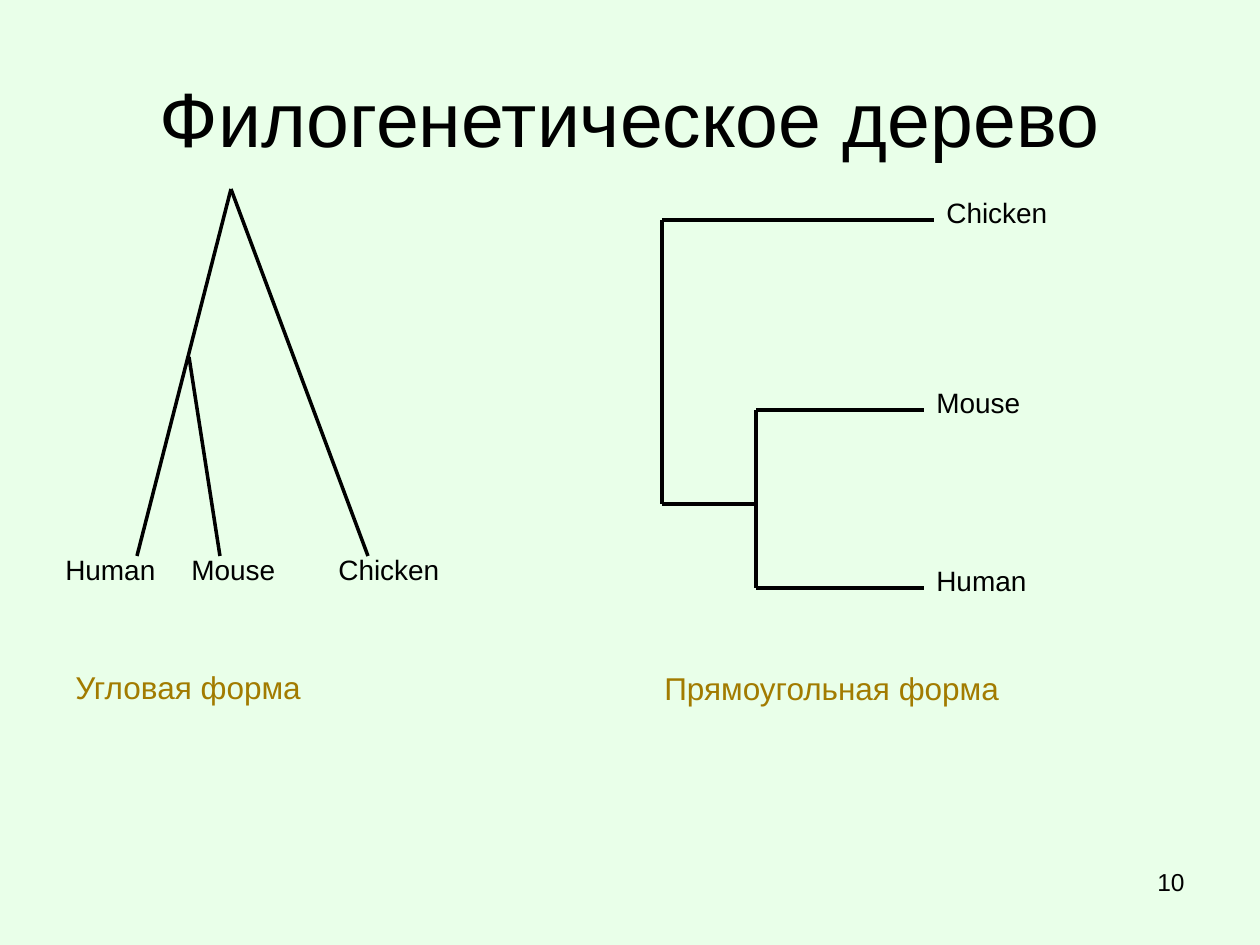
from dataclasses import dataclass

import pptx
import pptx.dml.color
import pptx.enum.shapes
import pptx.enum.text
import pptx.oxml.ns
import pptx.util
from lxml import etree

PX_PER_INCH = 126
ALIGN = pptx.enum.text.PP_ALIGN
ANCHOR = pptx.enum.text.MSO_ANCHOR


@dataclass(frozen=True)
class Theme:
    font: str = "Arial"
    background: str = "E9FFE9"
    ink: str = "000000"
    accent: str = "A27B00"
    title_size: int = 44
    caption_size: int = 18
    leaf_size: int = 16
    number_size: int = 14
    branch_width: int = 2


@dataclass(frozen=True)
class Box:
    left: int
    top: int
    width: int
    height: int


@dataclass(frozen=True)
class Leaf:
    species: str
    left: int
    top: int


@dataclass(frozen=True)
class Branch:
    x1: int
    y1: int
    x2: int
    y2: int


@dataclass(frozen=True)
class Tree:
    caption: str
    caption_box: Box
    branches: tuple[Branch, ...]
    leaves: tuple[Leaf, ...]


THEME = Theme()
LEAF_WIDTHS = {"Human": 116, "Mouse": 158, "Chicken": 210}
LEAF_HEIGHT = 46

# Angular form: the root on top, leaves along one baseline
ROOT_X, ROOT_Y = 231, 189
NODE_X, NODE_Y = 189, 357
BASELINE, LEAF_ROW = 556, 546
ANGULAR = Tree(
    "Угловая форма",
    Box(63, 662, 431, 50),
    (
        Branch(ROOT_X, ROOT_Y, 137, BASELINE),
        Branch(ROOT_X, ROOT_Y, 368, BASELINE),
        Branch(NODE_X, NODE_Y, 220, BASELINE),
    ),
    (
        Leaf("Human", 53, LEAF_ROW),
        Leaf("Chicken", 326, LEAF_ROW),
        Leaf("Mouse", 179, LEAF_ROW),
    ),
)

# Rectangular form: the root on the left, one level per species
STEM, FORK = 662, 756
TIP, CHICKEN_TIP = 924, 934
CHICKEN_Y, MOUSE_Y, FORK_Y, HUMAN_Y = 220, 410, 504, 588
LEAF_RISE = 31
RECTANGULAR = Tree(
    "Прямоугольная форма",
    Box(652, 663, 431, 50),
    (
        Branch(STEM, CHICKEN_Y, STEM, FORK_Y),
        Branch(STEM, CHICKEN_Y, CHICKEN_TIP, CHICKEN_Y),
        Branch(STEM, FORK_Y, FORK, FORK_Y),
        Branch(FORK, MOUSE_Y, FORK, HUMAN_Y),
        Branch(FORK, MOUSE_Y, TIP, MOUSE_Y),
        Branch(FORK, HUMAN_Y, TIP, HUMAN_Y),
    ),
    (
        Leaf("Human", TIP, HUMAN_Y - LEAF_RISE),
        Leaf("Mouse", TIP, MOUSE_Y - LEAF_RISE),
        Leaf("Chicken", CHICKEN_TIP, CHICKEN_Y - LEAF_RISE),
    ),
)


def px(length: int) -> pptx.util.Emu:
    return pptx.util.Emu(round(length * 914400 / PX_PER_INCH))


def rgb(value: str) -> pptx.dml.color.RGBColor:
    return pptx.dml.color.RGBColor.from_string(value)


def write(slide, text: str, box: Box, *, size: int, color: str = THEME.ink,
          align=ALIGN.LEFT, anchor=ANCHOR.TOP, holder=None) -> None:
    """Put formatted text in the holder, or in a new text box."""
    if holder is None:
        holder = slide.shapes.add_textbox(0, 0, 0, 0)
    holder.left, holder.top = px(box.left), px(box.top)
    holder.width, holder.height = px(box.width), px(box.height)
    frame = holder.text_frame
    frame.word_wrap = True
    frame.auto_size = pptx.enum.text.MSO_AUTO_SIZE.NONE
    frame.vertical_anchor = anchor
    paragraph = frame.paragraphs[0]
    paragraph.alignment = align
    run = paragraph.add_run()
    run.text = text
    run.font.name = THEME.font
    run.font.size = pptx.util.Pt(size)
    run.font.color.rgb = rgb(color)


def draw_branch(slide, branch: Branch) -> None:
    line = slide.shapes.add_connector(
        pptx.enum.shapes.MSO_CONNECTOR.STRAIGHT,
        px(branch.x1), px(branch.y1), px(branch.x2), px(branch.y2))
    line.line.color.rgb = rgb(THEME.ink)
    line.line.width = pptx.util.Pt(THEME.branch_width)
    etree.SubElement(line._element.spPr, pptx.oxml.ns.qn("a:effectLst"))


def draw_tree(slide, tree: Tree) -> None:
    for branch in tree.branches:
        draw_branch(slide, branch)
    for leaf in tree.leaves:
        box = Box(leaf.left, leaf.top, LEAF_WIDTHS[leaf.species], LEAF_HEIGHT)
        write(slide, leaf.species, box, size=THEME.leaf_size)
    write(slide, tree.caption, tree.caption_box,
          size=THEME.caption_size, color=THEME.accent)


def main() -> None:
    deck = pptx.Presentation()
    deck.slide_width, deck.slide_height = px(1260), px(945)
    slide = deck.slides.add_slide(deck.slide_layouts.get_by_name("Title Only"))
    slide.background.fill.solid()
    slide.background.fill.fore_color.rgb = rgb(THEME.background)

    # Title
    write(slide, "Филогенетическое дерево", Box(63, 38, 1134, 158),
          size=THEME.title_size, align=ALIGN.CENTER, anchor=ANCHOR.MIDDLE,
          holder=slide.shapes.title)

    # The two forms of the tree
    for tree in (ANGULAR, RECTANGULAR):
        draw_tree(slide, tree)

    # Page number
    write(slide, "10", Box(903, 861, 294, 66),
          size=THEME.number_size, align=ALIGN.RIGHT)

    deck.save("out.pptx")


if __name__ == "__main__":
    main()
